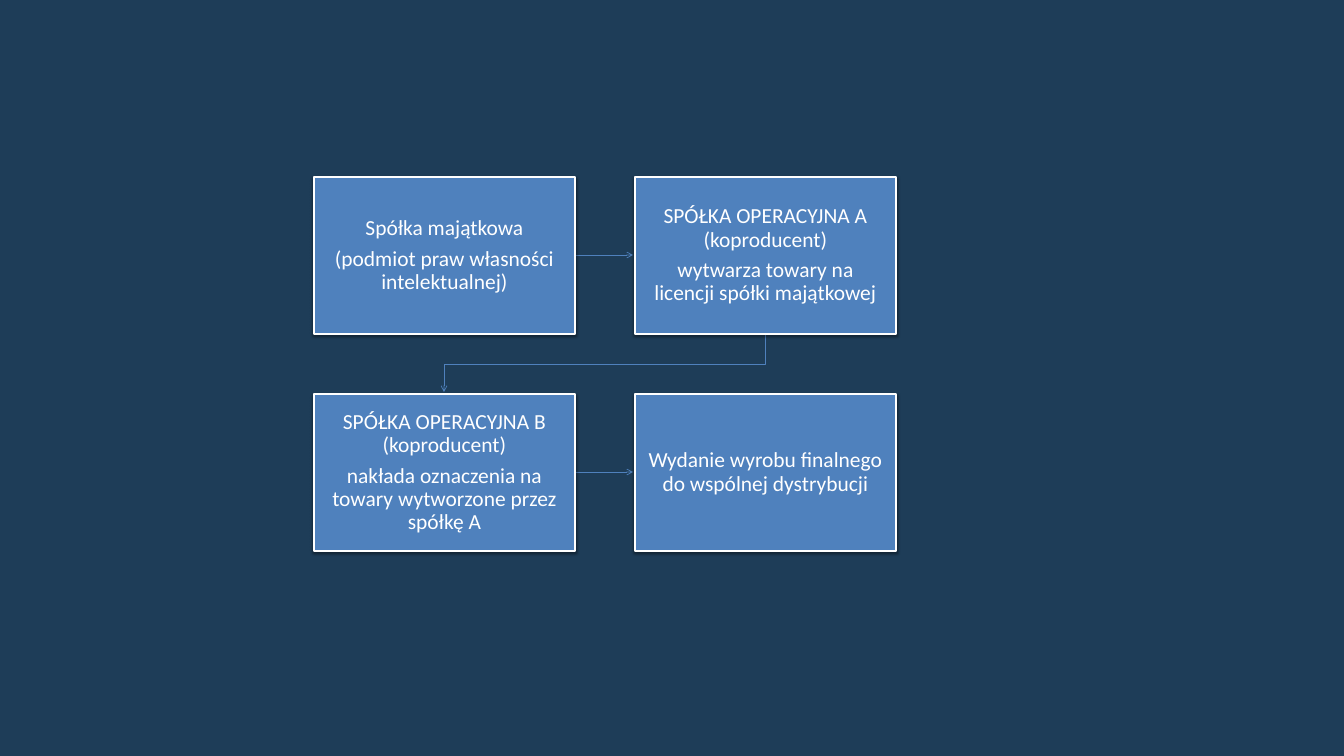
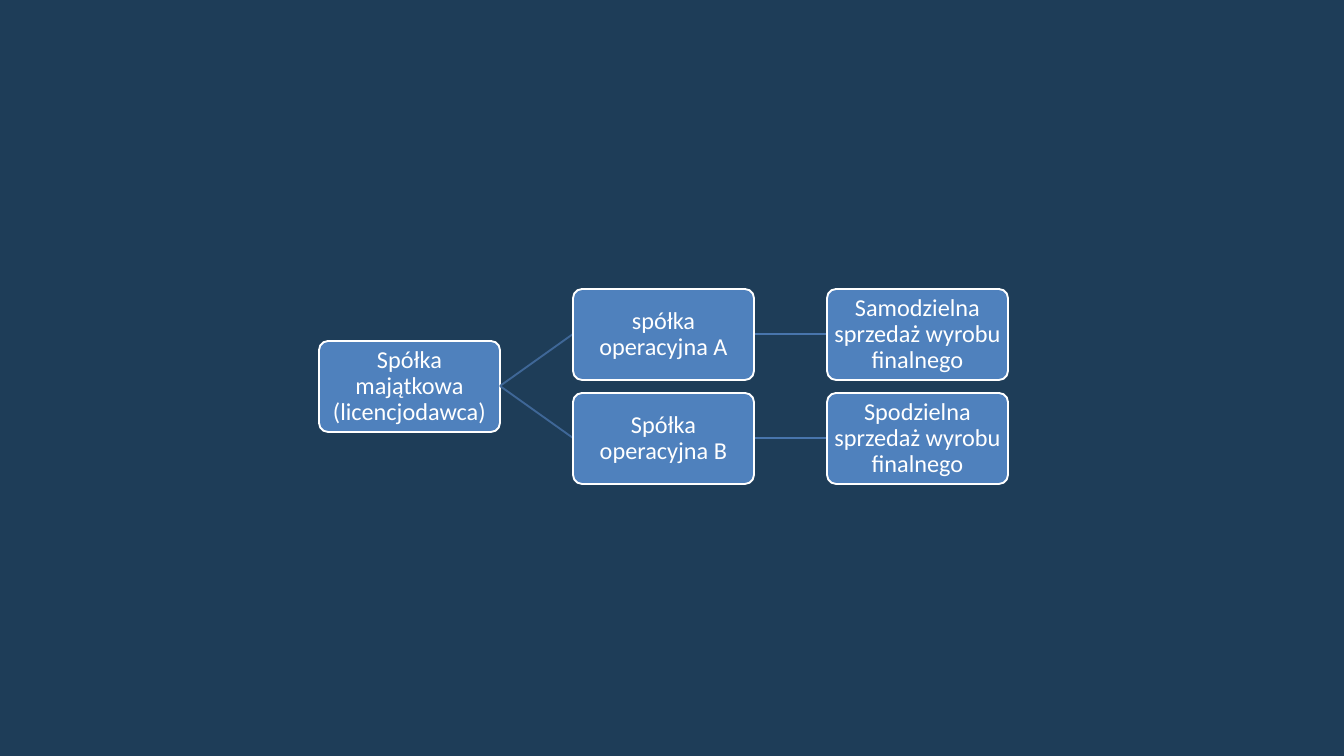
from pptx import Presentation
from pptx.dml.color import RGBColor
from pptx.enum.shapes import MSO_CONNECTOR, MSO_SHAPE
from pptx.enum.text import MSO_ANCHOR, PP_ALIGN
from pptx.oxml import parse_xml
from pptx.oxml.ns import nsdecls
from pptx.oxml.xmlchemy import OxmlElement
from pptx.util import Pt

PX = 914400 / 67.2
NAVY, BLUE, WHITE = "1E3D58", "4F81BD", "FFFFFF"
FORK, LINK = "3F6797", "4875AC"
FONT = "Calibri"

PROCESS = dict(kind=MSO_SHAPE.RECTANGLE, width=261, height=157, inset=12,
               size=23, border=3, shadow=True)
NODE = dict(kind=MSO_SHAPE.ROUNDED_RECTANGLE, width=181, height=91, inset=0,
            size=26, border=2, shadow=False)

STEPS = [
    ["Spółka majątkowa", "(podmiot praw własności intelektualnej)"],
    ["SPÓŁKA OPERACYJNA A (koproducent)",
     "wytwarza towary na licencji spółki majątkowej"],
    ["SPÓŁKA OPERACYJNA B (koproducent)",
     "nakłada oznaczenia na towary wytworzone przez spółkę A"],
    ["Wydanie wyrobu finalnego do wspólnej dystrybucji"],
]
LICENSOR = "Spółka majątkowa (licencjodawca)"
BRANCHES = [
    ("spółka operacyjna A", "Samodzielna sprzedaż wyrobu finalnego"),
    ("Spółka operacyjna B", "Spodzielna sprzedaż wyrobu finalnego"),
]


def px(n):
    return round(n * PX)


def rgb(hex_color):
    return RGBColor.from_string(hex_color)


def set_attrs(obj, values):
    for name, value in values.items():
        setattr(obj, name, value)


def style_line(sp, color, width, arrow=False):
    sp.line.color.rgb = rgb(color)
    sp.line.width = Pt(width)
    if arrow:
        end = OxmlElement("a:tailEnd")
        end.set("type", "arrow")
        sp.line._get_or_add_ln().append(end)


def add_drop_shadow(sp):
    effects = sp._element.spPr.find(".//{*}effectLst")
    effects.append(parse_xml(
        f'<a:outerShdw {nsdecls("a")} blurRad="{Pt(3.1)}" dist="{Pt(1.6)}" '
        'dir="5400000" rotWithShape="0"><a:srgbClr val="000000">'
        '<a:alpha val="38000"/></a:srgbClr></a:outerShdw>'))


def write_text(sp, paragraphs, size, inset):
    tf = sp.text_frame
    margins = ("margin_left", "margin_top", "margin_right", "margin_bottom")
    set_attrs(tf, dict.fromkeys(margins, px(inset)))
    set_attrs(tf, dict(word_wrap=True, vertical_anchor=MSO_ANCHOR.MIDDLE))
    for i, text in enumerate(paragraphs):
        p = tf.add_paragraph() if i else tf.paragraphs[0]
        set_attrs(p, dict(alignment=PP_ALIGN.CENTER, line_spacing=0.9,
                          space_before=Pt(8 if i else 0)))
        r = p.add_run()
        r.text = text
        set_attrs(r.font, dict(name=FONT, size=Pt(size)))
        r.font.color.rgb = rgb(WHITE)


def add_box(slide, x, y, paragraphs, style):
    sp = slide.shapes.add_shape(style["kind"], px(x), px(y),
                                px(style["width"]), px(style["height"]))
    if len(sp.adjustments):
        sp.adjustments[0] = 0.1
    sp.fill.solid()
    sp.fill.fore_color.rgb = rgb(BLUE)
    style_line(sp, WHITE, style["border"])
    sp.shadow.inherit = False
    if style["shadow"]:
        add_drop_shadow(sp)
    write_text(sp, paragraphs, style["size"], style["inset"])


def add_line(slide, x1, y1, x2, y2, color, width, arrow=False):
    c = slide.shapes.add_connector(MSO_CONNECTOR.STRAIGHT,
                                   px(x1), px(y1), px(x2), px(y2))
    style_line(c, color, width, arrow)
    c._element.spPr.append(OxmlElement("a:effectLst"))


def add_bent_arrow(slide, points, color, width):
    start, *rest = points
    builder = slide.shapes.build_freeform(*start, scale=PX)
    builder.add_line_segments(rest, close=False)
    sp = builder.convert_to_shape()
    sp.fill.background()
    style_line(sp, color, width, arrow=True)
    sp.shadow.inherit = False


def build_process(slide):
    left, top, col_pitch, row_pitch = 314, 177, 321, 217
    width, height = PROCESS["width"], PROCESS["height"]
    tip_gap = 2
    for row in range(2):
        y = top + row * row_pitch + height // 2
        add_line(slide, left + width, y, left + col_pitch - tip_gap, y,
                 BLUE, 0.75, arrow=True)
    x_first = left + width // 2
    x_second = x_first + col_pitch
    bottom, next_top = top + height, top + row_pitch
    bend = (bottom + next_top) // 2
    add_bent_arrow(slide, [(x_second, bottom), (x_second, bend),
                           (x_first, bend), (x_first, next_top - tip_gap)],
                   BLUE, 0.75)
    for i, paragraphs in enumerate(STEPS):
        row, col = divmod(i, 2)
        add_box(slide, left + col * col_pitch, top + row * row_pitch,
                paragraphs, PROCESS)


def build_tree(slide):
    left, top, col_pitch, row_pitch = 319, 289, 254, 104
    width, half = NODE["width"], NODE["height"] // 2
    company_x, sale_x = left + col_pitch, left + 2 * col_pitch
    root_top = top + row_pitch // 2
    add_box(slide, left, root_top, [LICENSOR], NODE)
    for i, (company, sale) in enumerate(BRANCHES):
        y = top + i * row_pitch
        add_line(slide, left + width, root_top + half, company_x, y + half,
                 FORK, 2)
        add_line(slide, company_x + width, y + half, sale_x, y + half,
                 LINK, 2)
        add_box(slide, company_x, y, [company], NODE)
        add_box(slide, sale_x, y, [sale], NODE)


def main():
    prs = Presentation()
    set_attrs(prs, dict(slide_width=px(1344), slide_height=px(756)))
    fill = prs.slide_master.background.fill
    fill.solid()
    fill.fore_color.rgb = rgb(NAVY)
    for build in (build_process, build_tree):
        build(prs.slides.add_slide(prs.slide_layouts[6]))
    prs.save("out.pptx")


if __name__ == "__main__":
    main()
